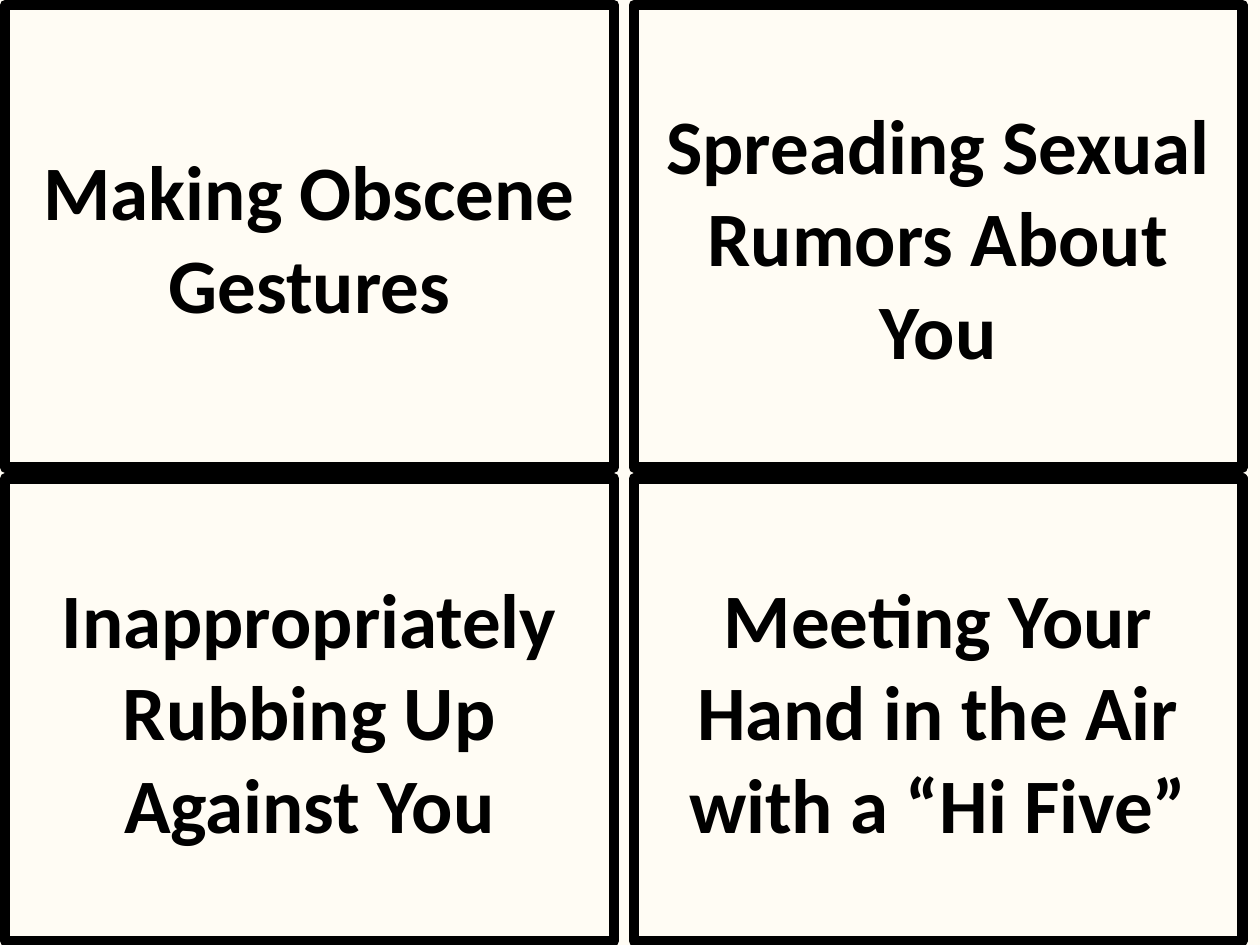
"""Build a slide of four bordered cards in a two-by-two grid."""
from pptx import Presentation
from pptx.dml.color import RGBColor
from pptx.enum import shapes, text
from pptx.util import Pt


def color(value):
    return RGBColor.from_string(value)


BACKGROUND = "FFFCF4"
INK = "000000"
LEFT, TOP = 3, 2.9
CARD_WIDTH, CARD_HEIGHT = 347.8, 264.2
COLUMN_STEP, ROW_STEP = 359.2, 270.7
CARDS = [
    "Making Obscene Gestures",
    "Spreading Sexual Rumors About You",
    "Inappropriately Rubbing Up Against You",
    "Meeting Your Hand in the Air with a “Hi Five”",
]

presentation = Presentation()
presentation.slide_width = Pt(720)
presentation.slide_height = Pt(540)
slide = presentation.slides.add_slide(presentation.slide_layouts[6])
slide.background.fill.solid()
slide.background.fill.fore_color.rgb = color(BACKGROUND)

for index, wording in enumerate(CARDS):
    row, column = divmod(index, 2)
    card = slide.shapes.add_shape(
        shapes.MSO_SHAPE.RECTANGLE,
        Pt(LEFT + column * COLUMN_STEP),
        Pt(TOP + row * ROW_STEP),
        Pt(CARD_WIDTH),
        Pt(CARD_HEIGHT),
    )
    card.shadow.inherit = False
    card.fill.solid()
    card.fill.fore_color.rgb = color(BACKGROUND)
    card.line.color.rgb = color(INK)
    card.line.width = Pt(6)

    text_frame = card.text_frame
    text_frame.text = wording
    text_frame.word_wrap = True
    text_frame.vertical_anchor = text.MSO_ANCHOR.MIDDLE
    paragraph = text_frame.paragraphs[0]
    paragraph.alignment = text.PP_ALIGN.CENTER
    font = paragraph.runs[0].font
    font.name = "Calibri"
    font.size = Pt(44)
    font.bold = True
    font.color.rgb = color(INK)

presentation.save("out.pptx")
